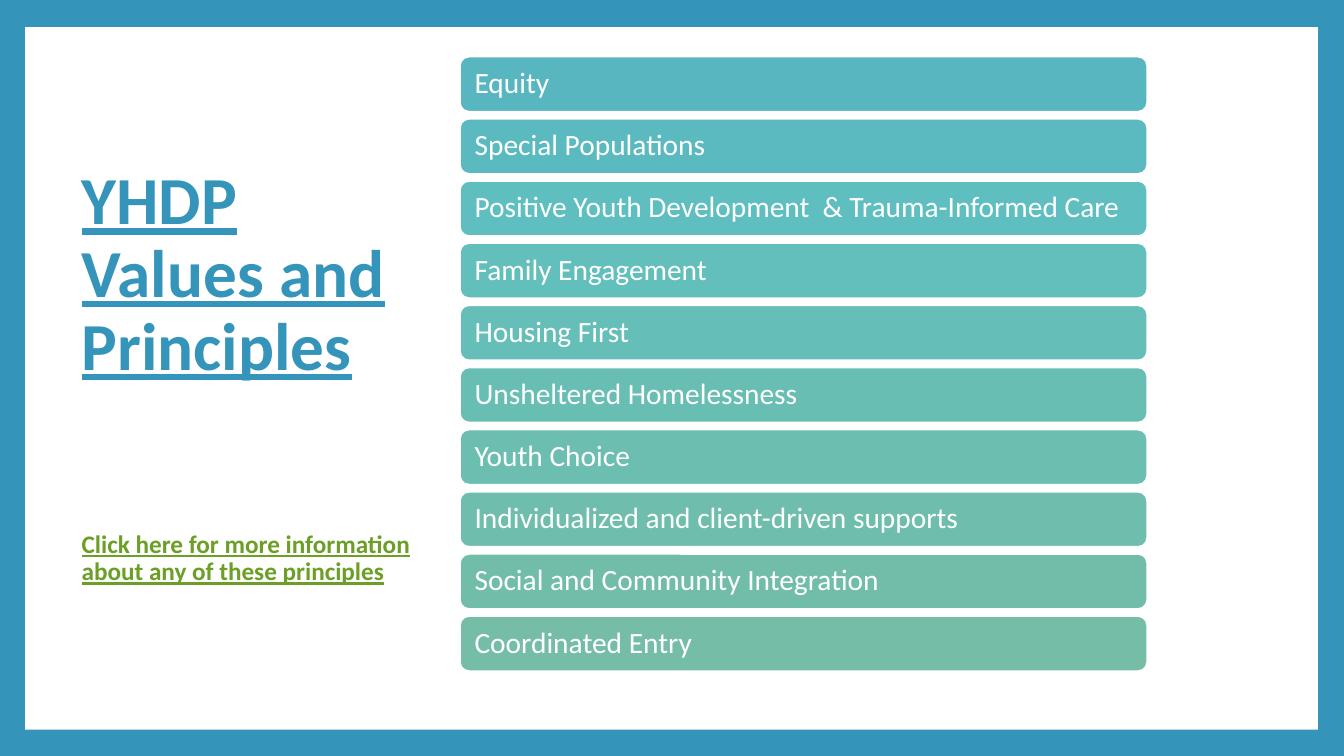
import dataclasses

import pptx
import pptx.dml.color
import pptx.enum.shapes
import pptx.enum.text
import pptx.util

Inches = pptx.util.Inches
Pt = pptx.util.Pt


@dataclasses.dataclass(frozen=True)
class Theme:
    font: str = "Calibri"
    blue: str = "3494BA"
    white: str = "FFFFFF"
    link: str = "6B9F25"
    title_size: int = 48
    link_size: int = 18
    bar_size: int = 21


@dataclasses.dataclass(frozen=True)
class Principle:
    text: str
    fill: str


THEME = Theme()
PRINCIPLES = [
    Principle("Equity", "58B6C0"),
    Principle("Special Populations", "5BBAC0"),
    Principle("Positive Youth Development  & Trauma-Informed Care", "5FBEBF"),
    Principle("Family Engagement", "62BFBB"),
    Principle("Housing First", "65BEB7"),
    Principle("Unsheltered Homelessness", "68BEB3"),
    Principle("Youth Choice", "6CBEB0"),
    Principle("Individualized and client-driven supports", "6FBDAC"),
    Principle("Social and Community Integration", "72BDAA"),
    Principle("Coordinated Entry", "75BDA7"),
]
BAR_LEFT, BAR_TOP, BAR_WIDTH, BAR_HEIGHT = 4.56, 0.56, 6.82, 0.55
BAR_PITCH = (6.11 - BAR_TOP) / (len(PRINCIPLES) - 1)


def rgb(value: str) -> pptx.dml.color.RGBColor:
    return pptx.dml.color.RGBColor.from_string(value)


def format_paragraph(p, size: int, color: str, emphasis: bool = False) -> None:
    p.alignment = pptx.enum.text.PP_ALIGN.LEFT
    p.line_spacing = 0.9
    for r in p.runs:
        r.font.name = THEME.font
        r.font.size = Pt(size)
        r.font.color.rgb = rgb(color)
        r.font.bold = emphasis
        r.font.underline = emphasis


def add_frame(s) -> None:
    s.background.fill.solid()
    s.background.fill.fore_color.rgb = rgb(THEME.blue)
    sp = s.shapes.add_shape(
        pptx.enum.shapes.MSO_SHAPE.RECTANGLE,
        Inches(0.25), Inches(0.27), Inches(12.82), Inches(6.97),
    )
    sp.shadow.inherit = False
    sp.fill.solid()
    sp.fill.fore_color.rgb = rgb(THEME.white)
    sp.line.fill.background()
    s.shapes.title.element.addprevious(sp.element)


def add_title(s) -> None:
    title = s.shapes.title
    title.left, title.top = Inches(0.71), Inches(0.67)
    title.width, title.height = Inches(3.68), Inches(6.13)
    tf = title.text_frame
    tf.text = "YHDP Values and Principles"
    tf.word_wrap = True
    tf.auto_size = pptx.enum.text.MSO_AUTO_SIZE.NONE
    tf.vertical_anchor = pptx.enum.text.MSO_ANCHOR.MIDDLE
    format_paragraph(tf.paragraphs[0], THEME.title_size, THEME.blue, True)
    p = tf.add_paragraph()
    p.text = "Click here for more information about any of these principles"
    p.space_before = Pt(105)
    format_paragraph(p, THEME.link_size, THEME.link, True)


def add_bar(s, principle: Principle, top: float) -> None:
    sp = s.shapes.add_shape(
        pptx.enum.shapes.MSO_SHAPE.ROUNDED_RECTANGLE,
        Inches(BAR_LEFT), Inches(top), Inches(BAR_WIDTH), Inches(BAR_HEIGHT),
    )
    sp.shadow.inherit = False
    sp.fill.solid()
    sp.fill.fore_color.rgb = rgb(principle.fill)
    sp.line.color.rgb = rgb(THEME.white)
    sp.line.width = Pt(1.5)
    tf = sp.text_frame
    tf.text = principle.text
    tf.word_wrap = True
    tf.vertical_anchor = pptx.enum.text.MSO_ANCHOR.MIDDLE
    tf.margin_left = tf.margin_right = Inches(0.12)
    format_paragraph(tf.paragraphs[0], THEME.bar_size, THEME.white)


def main() -> None:
    prs = pptx.Presentation()
    prs.slide_width, prs.slide_height = Inches(13.33), Inches(7.5)
    s = prs.slides.add_slide(prs.slide_layouts.get_by_name("Title Only"))
    add_frame(s)
    add_title(s)
    for i, principle in enumerate(PRINCIPLES):
        add_bar(s, principle, BAR_TOP + i * BAR_PITCH)
    prs.save("out.pptx")


if __name__ == "__main__":
    main()
